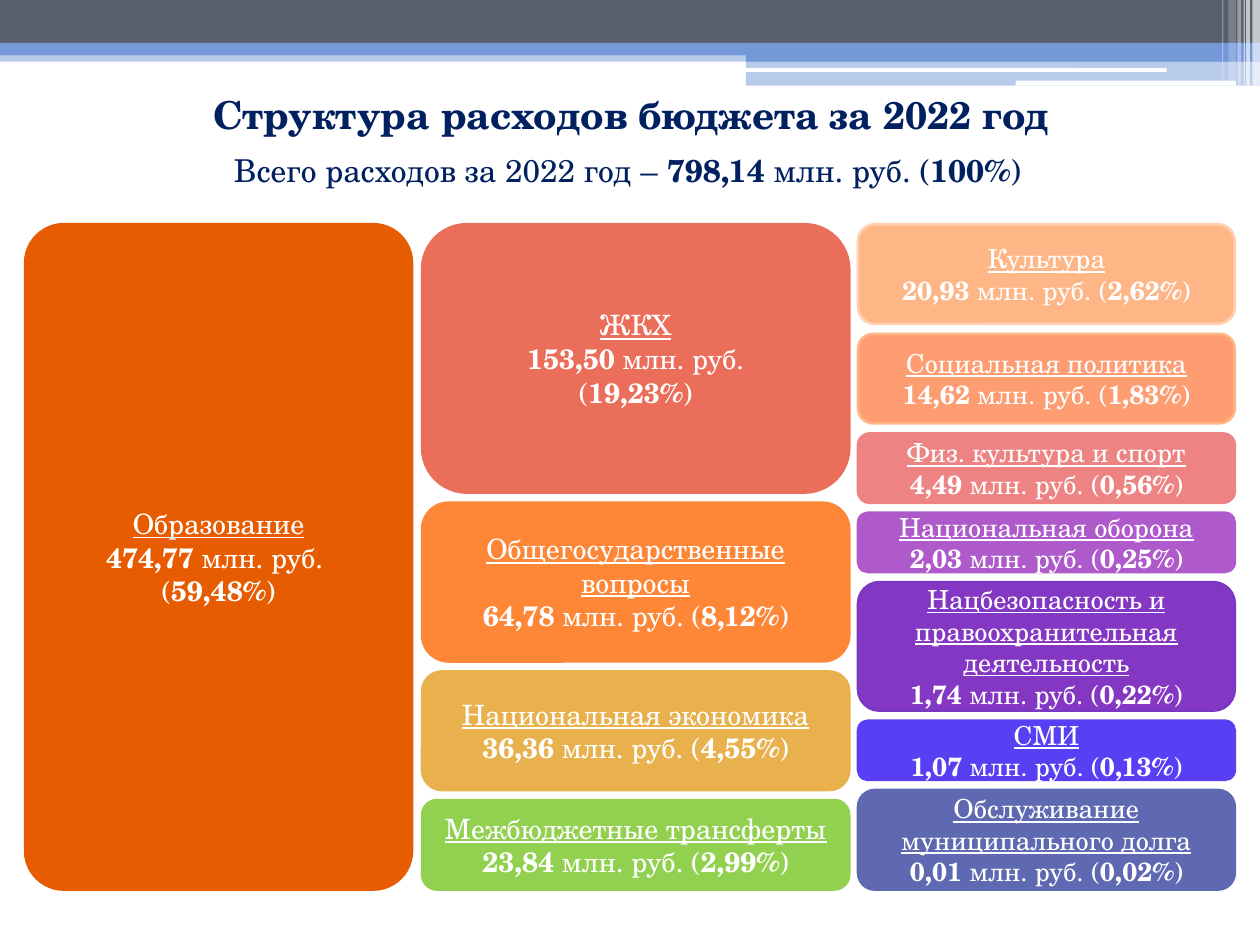
import pptx
import pptx.dml.color
import pptx.enum.shapes
import pptx.enum.text
import pptx.oxml
import pptx.util
from pptx.util import Inches

SHAPES = pptx.enum.shapes.MSO_SHAPE
ANCHOR = pptx.enum.text.MSO_ANCHOR
FONT = "TeX Gyre Schola"
NAVY, WHITE, SLATE, BLUE = "002060", "FFFFFF", "575F6D", "7598D9"
TOP, GAP = 1.78, 0.08


def color(value):
    return pptx.dml.color.RGBColor.from_string(value)


def write(paragraph, text, size=16, ink=WHITE, bold=False, underline=False):
    """Fill a centred paragraph; parts between asterisks are bold."""
    paragraph.alignment = pptx.enum.text.PP_ALIGN.CENTER
    paragraph.space_before = pptx.util.Pt(0)
    for index, part in enumerate(text.split("*")):
        if part:
            span = paragraph.add_run()
            span.text = part
            span.font.name = FONT
            span.font.size = pptx.util.Pt(size)
            span.font.color.rgb = color(ink)
            span.font.bold = bold or index % 2 == 1
            span.font.underline = underline


class BudgetPage:
    def __init__(self, deck):
        self.page = deck.slides.add_slide(deck.slide_layouts[1])

    def shape(self, kind, at, fill, opacity=100):
        box = self.page.shapes.add_shape(kind, *map(Inches, at))
        box.shadow.inherit = False
        box.fill.solid()
        box.fill.fore_color.rgb = color(fill)
        box.line.fill.background()
        if opacity < 100:
            alpha = pptx.oxml.parse_xml(
                '<a:alpha xmlns:a="http://schemas.openxmlformats.org/drawingml/2006/main"'
                f' val="{opacity * 1000}"/>')
            box.fill._xPr.find(".//" + pptx.oxml.ns.qn("a:srgbClr")).append(alpha)
        return box

    def placeholder(self, index, at, anchor):
        """Move a template placeholder and return its first paragraph."""
        box = self.page.placeholders[index]
        box.left, box.top, box.width, box.height = map(Inches, at)
        frame = box.text_frame
        frame.auto_size = pptx.enum.text.MSO_AUTO_SIZE.NONE
        frame.vertical_anchor = anchor
        return frame.paragraphs[0]

    def title(self, text, at):
        write(self.placeholder(0, at, ANCHOR.MIDDLE), text, size=22, ink=NAVY, bold=True)

    def total(self, text, at):
        paragraph = self.placeholder(1, at, ANCHOR.TOP)
        properties = paragraph._p.get_or_add_pPr()
        properties.set("marL", str(Inches(0.4)))
        properties.set("indent", str(Inches(-0.28)))
        properties.append(pptx.oxml.parse_xml(
            '<a:buNone xmlns:a="http://schemas.openxmlformats.org/drawingml/2006/main"/>'))
        write(paragraph, text, size=18, ink=NAVY)

    def block(self, at, name, amounts, fill, line, size, corner):
        box = self.shape(SHAPES.ROUNDED_RECTANGLE, at, fill)
        box.adjustments[0] = corner
        box.line.color.rgb = color(line)
        box.line.width = pptx.util.Pt(1.5)
        frame = box.text_frame
        frame.word_wrap = True
        frame.vertical_anchor = ANCHOR.MIDDLE
        write(frame.paragraphs[0], name, size=size, underline=True)
        for amount in amounts:
            write(frame.add_paragraph(), amount, size=size)

    def column(self, left, width, size, blocks, corner=0.167):
        """Stack blocks of (height, name, amounts, fill, line) with equal gaps."""
        top = TOP
        for height, name, amounts, fill, line in blocks:
            self.block((left, top, width, height), name, amounts, fill, line, size, corner)
            top += height + GAP


BANDS = [
    ((0, 0.4, 10, 0.09), BLUE, 50),
    ((0, 0, 10, 0.34), SLATE, 100),
    ((0, 0.34, 10, 0.1), BLUE, 100),
    ((5.92, 0.39, 4.08, 0.1), BLUE, 100),
    ((5.92, 0.48, 4.08, 0.2), BLUE, 50),
]
HIGHLIGHTS = [(5.91, 0.54, 3.35, 0.03), (8.06, 0.64, 1.75, 0.04)]
# left, width, height, opacity
STRIPES = [
    (9.94, 0.06, 0.68, 65), (9.89, 0.03, 0.68, 65), (9.87, 0.01, 0.68, 60),
    (9.82, 0.03, 0.68, 40), (9.75, 0.06, 0.64, 20), (9.7, 0.01, 0.64, 30),
]
EDUCATION = [
    (5.28, "Образование", ["*474,77* млн. руб. ", "(*59,48%*)"], "E75C01", "E75C01"),
]
LARGE = [
    (2.13, "ЖКХ", ["*153,50* млн. руб.", "(*19,23%*)"], "EB6E5A", "EB6E5A"),
    (1.26, "Общегосударственные вопросы", ["*64,78* млн. руб. (*8,12%*)"], "FE8637", "FE8637"),
    (0.94, "Национальная экономика", ["*36,36* млн. руб. (*4,55%*)"], "E8B14E", "E8B14E"),
    (0.71, "Межбюджетные трансферты", ["*23,84* млн. руб. (*2,99%*)"], "92D050", "92D050"),
]
SMALL = [
    (0.79, "Культура", ["*20,93 *млн. руб. (*2,62%*)"], "FEB687", "FFCFAF"),
    (0.71, "Социальная политика", ["*14,62* млн. руб. (*1,83%*)"], "FE9D72", "FEB687"),
    (0.55, "Физ. культура и спорт", ["*4,49* млн. руб. (*0,56%*)"], "ED8383", "ED8383"),
    (0.47, "Национальная оборона", ["*2,03* млн. руб. (*0,25%*)"], "AF5ACA", "AF5ACA"),
    (1.02, "Нацбезопасность и правоохранительная деятельность",
     ["*1,74* млн. руб. (*0,22%*)"], "8437C3", "7A38C2"),
    (0.47, "СМИ", ["*1,07* млн. руб. (*0,13%*)"], "593FF3", "593FF3"),
    (0.79, "Обслуживание муниципального долга",
     ["*0,01* млн. руб. (*0,02%*)"], "5F69B1", "5F69B1"),
]


def main():
    deck = pptx.Presentation()
    deck.slide_width, deck.slide_height = Inches(10), Inches(7.5)
    budget = BudgetPage(deck)
    for at, fill, opacity in BANDS:
        budget.shape(SHAPES.RECTANGLE, at, fill, opacity)
    for at in HIGHLIGHTS:
        budget.shape(SHAPES.ROUNDED_RECTANGLE, at, WHITE)
    for left, width, height, opacity in STRIPES:
        budget.shape(SHAPES.RECTANGLE, (left, 0, width, height), WHITE, opacity)
    budget.title("Структура расходов бюджета за 2022 год", (0.51, 0.6, 9, 0.61))
    budget.total("Всего расходов за 2022 год – *798,14* млн. руб. (*100%*)",
                 (0.59, 1.15, 8.66, 0.63))
    budget.column(0.2, 3.07, 16, EDUCATION, corner=0.1)
    budget.column(3.35, 3.39, 16, LARGE)
    budget.column(6.81, 2.99, 15, SMALL)
    deck.save("out.pptx")


if __name__ == "__main__":
    main()
